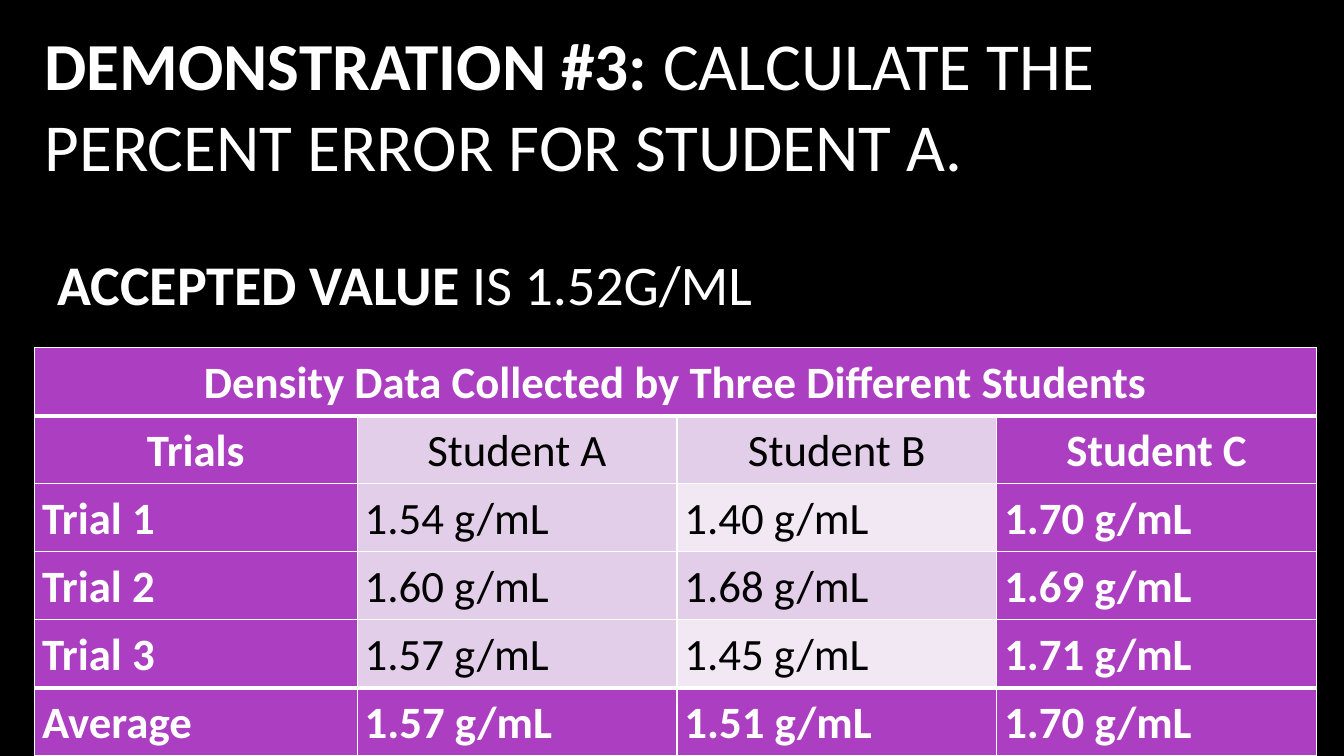
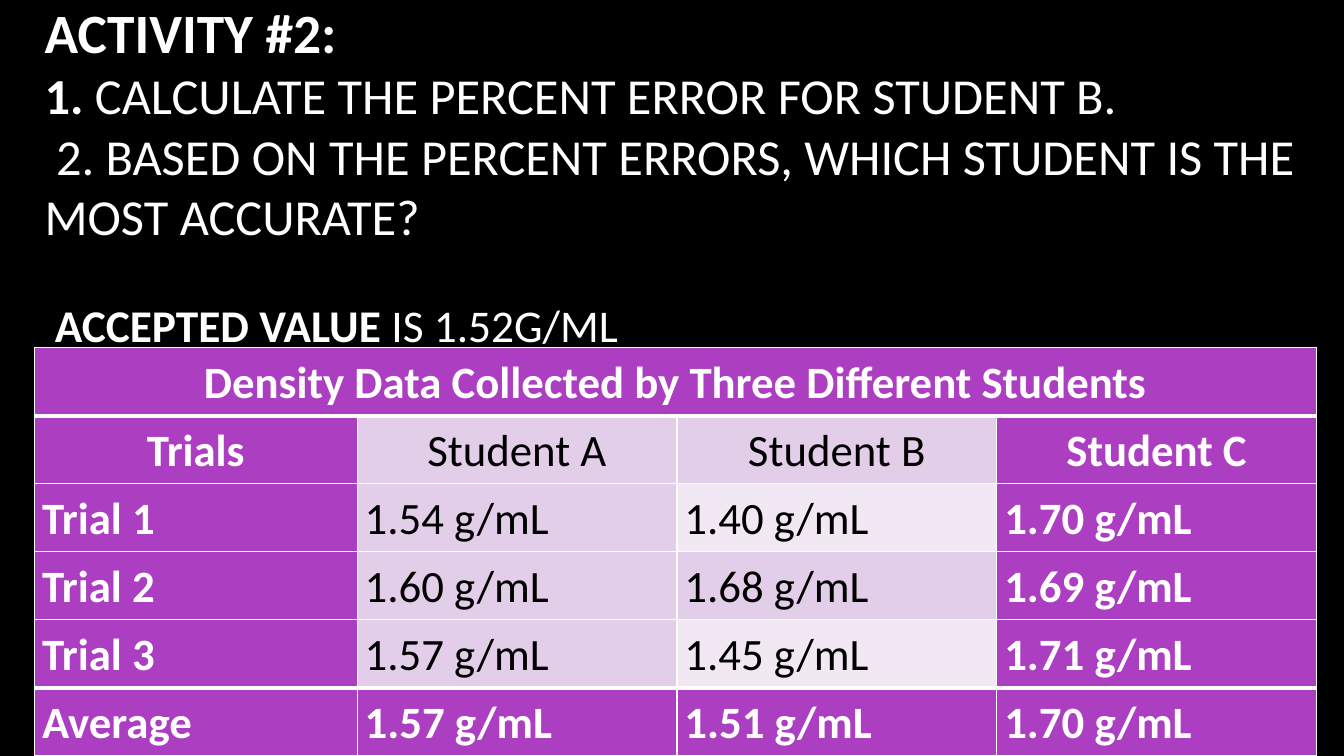
from lxml import etree
from pptx import Presentation
from pptx import util as u
from pptx.dml.color import RGBColor
from pptx.enum import text
from pptx.oxml.ns import qn

FONT = "Calibri"
HUES = {"back": "000000", "light": "FFFFFF", "dark": "000000",
        "plum": "AC3EC1", "lilac": "E3CEE9", "mist": "F1E8F4"}

# Boxes in cm: left, top, width, height
GRID = (0.87, 8.76, 32.31, 10.29)
FIRST = 8.13  # width of the label column

DATA = [
    ["Density Data Collected by Three Different Students", "", "", ""],
    ["Trials", "Student A", "Student B", "Student C"],
    ["Trial 1", "1.54 g/mL", "1.40 g/mL", "1.70 g/mL"],
    ["Trial 2", "1.60 g/mL", "1.68 g/mL", "1.69 g/mL"],
    ["Trial 3", "1.57 g/mL", "1.45 g/mL", "1.71 g/mL"],
    ["Average", "1.57 g/mL", "1.51 g/mL", "1.70 g/mL"],
]


def hue(name):
    return RGBColor.from_string(HUES[name])


def put(para, words, size=32, color="light", bold=False):
    """Add one formatted run to a paragraph."""
    run = para.add_run()
    run.text = words
    font = run.font
    font.name, font.size, font.bold = FONT, u.Pt(size), bold
    font.color.rgb = hue(color)


def title(slide, box, lines):
    """Fill the title; a line is (runs, indent in cm, space before in pt)."""
    shape = slide.shapes.title
    shape.left, shape.top, shape.width, shape.height = map(u.Cm, box)
    frame = shape.text_frame
    frame.word_wrap = True
    frame.auto_size = text.MSO_AUTO_SIZE.NONE
    frame.vertical_anchor = text.MSO_ANCHOR.TOP
    frame.margin_top = frame.margin_bottom = 0
    for i, (runs, indent, before) in enumerate(lines):
        para = frame.add_paragraph() if i else frame.paragraphs[0]
        para.alignment = text.PP_ALIGN.LEFT
        para.line_spacing = 1.0
        if before:
            para.space_before = u.Pt(before)
        if indent:
            para._p.get_or_add_pPr().set("indent", str(u.Cm(indent)))
        for words, size, bold in runs:
            put(para, words, size=size, bold=bold)


def edge(cell, top, bottom):
    """Draw the cell borders, widths in points."""
    props = cell._tc.get_or_add_tcPr()
    for side, width in zip("LRTB", (1, 1, top, bottom)):
        line = etree.SubElement(props, qn(f"a:ln{side}"), w=str(u.Pt(width)))
        fill = etree.SubElement(line, qn("a:solidFill"))
        etree.SubElement(fill, qn("a:srgbClr"), val=HUES["light"])


def table(slide, box, data):
    """Place the density table with strong outer rows and columns."""
    rows, cols = len(data), len(data[0])
    last = rows - 1
    grid = slide.shapes.add_table(rows, cols, *map(u.Cm, box)).table
    grid.first_row = grid.horz_banding = False
    for c, col in enumerate(grid.columns):
        col.width = u.Cm((box[2] - FIRST) / (cols - 1) if c else FIRST)
    for r, row in enumerate(grid.rows):
        row.height = u.Cm(box[3] / rows)
        for c, cell in enumerate(row.cells):
            strong = r in (0, last) or c in (0, cols - 1)
            pale = "mist" if c == 2 and r % 2 == 0 else "lilac"
            edge(cell, 3 if r in (1, last) else 1,
                 3 if r in (0, last - 1) else 1)
            cell.fill.solid()
            cell.fill.fore_color.rgb = hue("plum" if strong else pale)
            cell.margin_left = cell.margin_right = u.Cm(0.19)
            cell.margin_top = cell.margin_bottom = 0
            para = cell.text_frame.paragraphs[0]
            para.line_spacing = 1.15
            if r < 2:
                para.alignment = text.PP_ALIGN.CENTER
            if data[r][c]:
                put(para, data[r][c], bold=strong,
                    color="light" if strong else "dark")
    grid.cell(0, 0).merge(grid.cell(0, cols - 1))


def given(size, indent, before):
    """The line that states the accepted value."""
    runs = [("ACCEPTED VALUE", size, True), (" IS 1.52G/ML", size, False)]
    return runs, indent, before


def page(deck, top, lines):
    """One slide: title text above the table."""
    slide = deck.slides.add_slide(deck.slide_layouts[5])
    title(slide, (0.87, top, 32.69, GRID[1] - top), lines)
    table(slide, GRID, DATA)


def main():
    deck = Presentation()
    deck.slide_width, deck.slide_height = u.Cm(33.87), u.Cm(19.05)
    back = deck.slide_master.background.fill
    back.solid()
    back.fore_color.rgb = hue("back")

    # Demonstration
    page(deck, 0.6, [
        ([("DEMONSTRATION #3: ", 48, True),
          ("CALCULATE THE PERCENT ERROR FOR STUDENT A.", 48, False)], 0, 0),
        given(40, 0.32, 46),
    ])

    # Activity
    page(deck, -0.05, [
        ([("ACTIVITY #2:", 39.6, True)], 0, 0),
        ([("1. ", 36, True),
          ("CALCULATE THE PERCENT ERROR FOR STUDENT B.", 36, False)], 0, 0),
        ([("2. BASED ON THE PERCENT ERRORS, WHICH STUDENT IS THE "
           "MOST ACCURATE?", 36, False)], 0.29, 0),
        given(32.4, 0.26, 36.5),
    ])
    deck.save("out.pptx")


if __name__ == "__main__":
    main()
